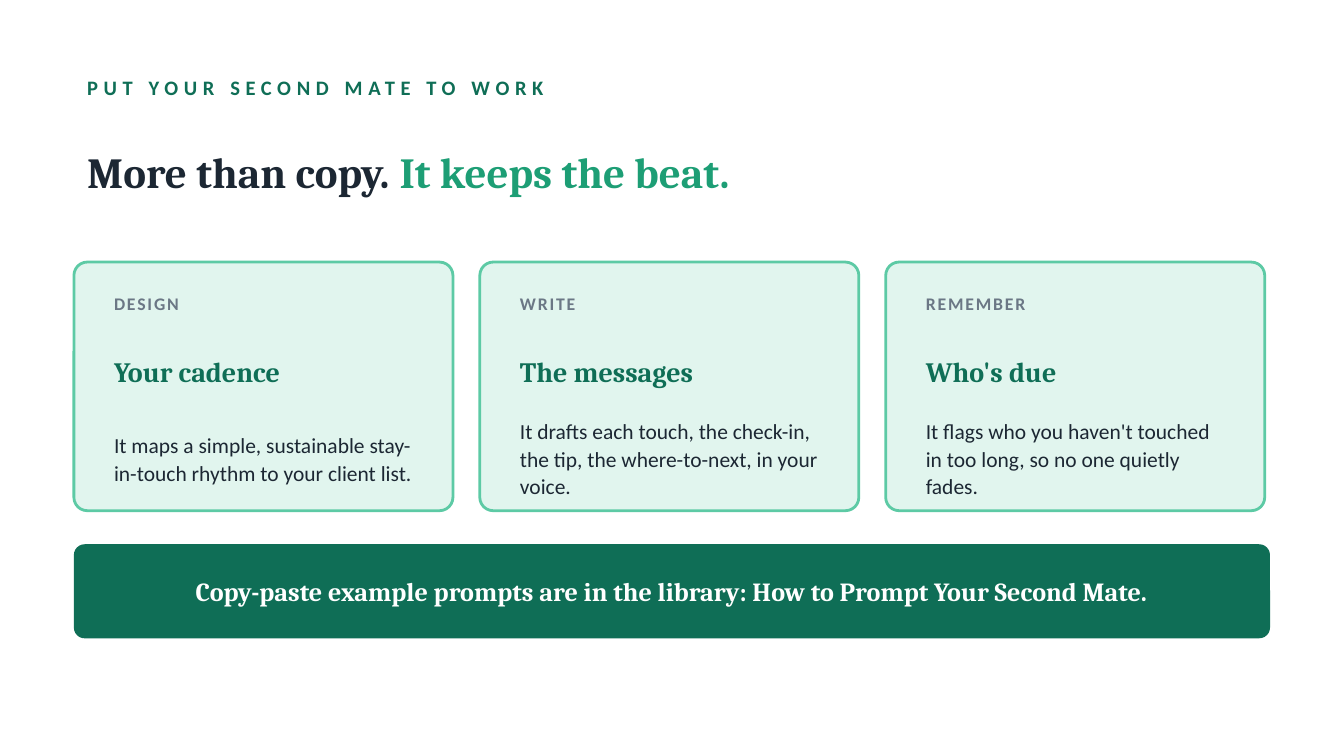
"""Builds a slide with a headline, three feature cards and a closing banner."""
from pptx import Presentation
from pptx.dml.color import RGBColor
from pptx.enum.shapes import MSO_SHAPE
from pptx.enum.text import MSO_ANCHOR, PP_ALIGN
from pptx.util import Inches, Pt

ROUNDED = MSO_SHAPE.ROUNDED_RECTANGLE
MIDDLE = MSO_ANCHOR.MIDDLE
LEFT, CENTER = PP_ALIGN.LEFT, PP_ALIGN.CENTER

WHITE = RGBColor(0xFF, 0xFF, 0xFF)
INK = RGBColor(0x1C, 0x27, 0x33)
GRAY = RGBColor(0x6B, 0x77, 0x85)
DEEP_GREEN = RGBColor(0x0F, 0x6E, 0x56)
GREEN = RGBColor(0x1D, 0x9E, 0x75)
MINT = RGBColor(0x5D, 0xCA, 0xA5)
PALE_MINT = RGBColor(0xE1, 0xF5, 0xEE)

SANS, SERIF = "Calibri", "Cambria"

KICKER = "PUT YOUR SECOND MATE TO WORK"
HEADLINE = [("More than copy. ", INK), ("It keeps the beat.", GREEN)]
CARDS = [
    ("DESIGN", "Your cadence",
     "It maps a simple, sustainable stay-in-touch rhythm to your client list."),
    ("WRITE", "The messages",
     "It drafts each touch, the check-in, the tip, the where-to-next, in your voice."),
    ("REMEMBER", "Who's due",
     "It flags who you haven't touched in too long, so no one quietly fades."),
]
BANNER = "Copy-paste example prompts are in the library: How to Prompt Your Second Mate."

PAGE_WIDTH = 10
PAGE_HEIGHT = PAGE_WIDTH * 9 / 16
MARGIN = 0.55
CONTENT_WIDTH = PAGE_WIDTH - 2 * MARGIN
CARD_TOP, CARD_WIDTH, CARD_HEIGHT, CARD_GAP = 1.95, 2.82, 1.85, 0.2
CARD_PADDING, CARD_TEXT_WIDTH = 0.2, 2.45
BANNER_TOP, BANNER_HEIGHT, BANNER_PADDING = 4.05, 0.7, 0.25
CORNER_RADIUS = {"card": 0.1, "banner": 0.08}


def add_text(page, area, spans, font, size, bold=True, tracking=0,
             align=LEFT, line_spacing=None):
    box = page.shapes.add_textbox(*map(Inches, area))
    frame = box.text_frame
    frame.word_wrap = True
    frame.vertical_anchor = MIDDLE
    para = frame.paragraphs[0]
    para.alignment = align
    if line_spacing:
        para.line_spacing = line_spacing
    para.font.name, para.font.size, para.font.bold = font, Pt(size), bold
    for text, color in spans:
        span = para.add_run()
        span.text = text
        span.font.color.rgb = color
        if tracking:
            span.font._element.set("spc", str(tracking * 100))


def add_panel(page, area, radius, fill, outline=None):
    panel = page.shapes.add_shape(ROUNDED, *map(Inches, area))
    panel.adjustments[0] = radius / min(area[2:])
    panel.shadow.inherit = False
    panel.fill.solid()
    panel.fill.fore_color.rgb = fill
    if outline:
        panel.line.color.rgb = outline
        panel.line.width = Pt(1.5)
    else:
        panel.line.fill.background()


def add_card(page, column, label, title, body):
    left = MARGIN + column * (CARD_WIDTH + CARD_GAP)
    text_left = left + CARD_PADDING
    add_panel(page, (left, CARD_TOP, CARD_WIDTH, CARD_HEIGHT),
              CORNER_RADIUS["card"], PALE_MINT, MINT)
    add_text(page, (text_left, CARD_TOP + 0.16, CARD_TEXT_WIDTH, 0.3),
             [(label, GRAY)], SANS, 9.5, tracking=1)
    add_text(page, (text_left, CARD_TOP + 0.46, CARD_TEXT_WIDTH, 0.7),
             [(title, DEEP_GREEN)], SERIF, 15)
    add_text(page, (text_left, CARD_TOP + 1.18, CARD_TEXT_WIDTH, 0.55),
             [(body, INK)], SANS, 11.5, bold=False, line_spacing=1.08)


def main():
    deck = Presentation()
    deck.slide_width, deck.slide_height = Inches(PAGE_WIDTH), Inches(PAGE_HEIGHT)
    page = deck.slides.add_slide(deck.slide_layouts[6])
    page.background.fill.solid()
    page.background.fill.fore_color.rgb = WHITE

    add_text(page, (MARGIN, 0.5, CONTENT_WIDTH, 0.3),
             [(KICKER, DEEP_GREEN)], SANS, 11, tracking=3)
    add_text(page, (MARGIN, 0.85, CONTENT_WIDTH, 0.85), HEADLINE, SERIF, 23)
    for column, card in enumerate(CARDS):
        add_card(page, column, *card)
    add_panel(page, (MARGIN, BANNER_TOP, CONTENT_WIDTH, BANNER_HEIGHT),
              CORNER_RADIUS["banner"], DEEP_GREEN)
    add_text(page, (MARGIN + BANNER_PADDING, BANNER_TOP,
                    CONTENT_WIDTH - 2 * BANNER_PADDING, BANNER_HEIGHT),
             [(BANNER, WHITE)], SERIF, 14, align=CENTER)
    deck.save("out.pptx")


if __name__ == "__main__":
    main()
